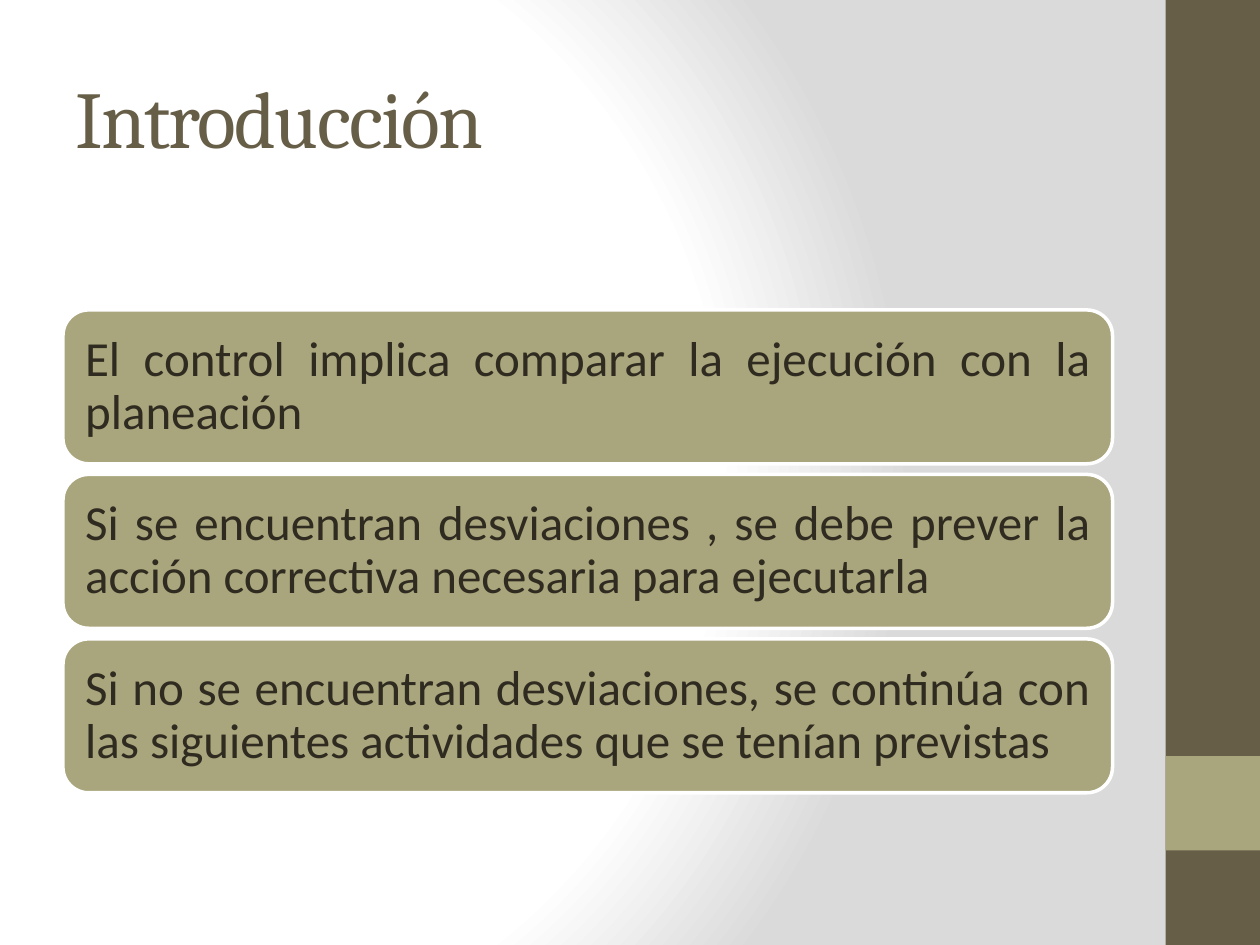
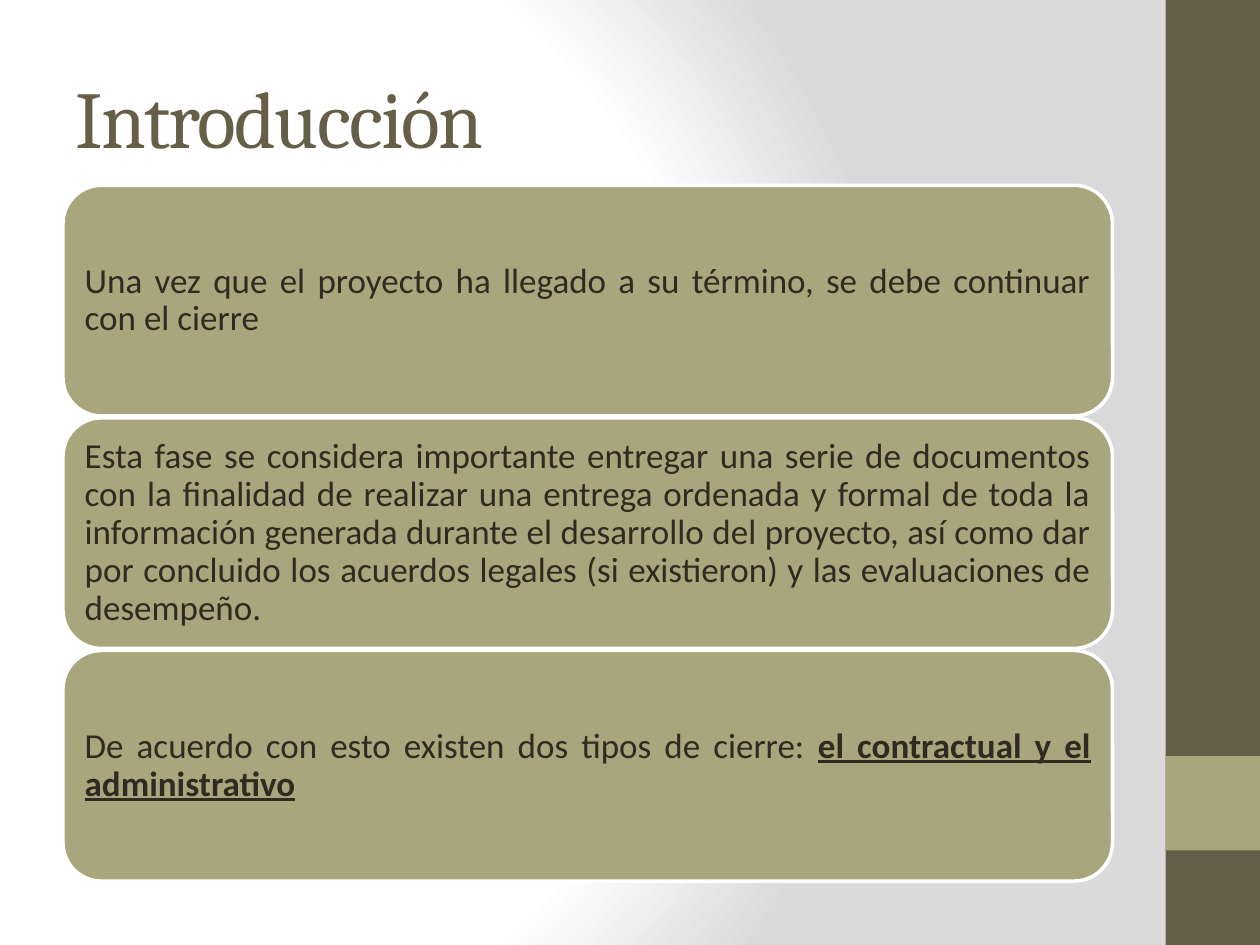
from dataclasses import dataclass
from typing import NamedTuple

from pptx import Presentation
from pptx.dml.color import RGBColor
from pptx.enum.shapes import MSO_SHAPE as Preset
from pptx.enum.text import MSO_ANCHOR as Anchor, PP_ALIGN as Align
from pptx.oxml import parse_xml
from pptx.oxml.ns import nsdecls
from pptx.util import Pt

BROWN = RGBColor(0x67, 0x5E, 0x47)
OLIVE = RGBColor(0xA9, 0xA5, 0x7C)
INK = RGBColor(0x2F, 0x2B, 0x20)
WHITE = RGBColor(0xFF, 0xFF, 0xFF)
GREY = RGBColor(0xDA, 0xDA, 0xDA)

TITLE_FONT = "Cambria"
BODY_FONT = "Calibri"
SLIDE_WIDTH, SLIDE_HEIGHT = 720, 540
CONTENT_LEFT, CONTENT_WIDTH = 36, 599.76
BAND_SIZE = 54
TITLE_ONLY_LAYOUT = 5


class Band(NamedTuple):
    top: float
    height: float
    color: RGBColor


class Span(NamedTuple):
    text: str
    emphasis: bool = False


@dataclass(frozen=True)
class CardStack:
    """Equal cards placed one below another; lengths and sizes in points."""
    top: float
    card_height: float
    gap: float
    inset: float
    font_size: float
    cards: list[list[Span]]


BANDS = [Band(0, SLIDE_HEIGHT, BROWN), Band(432, BAND_SIZE, OLIVE)]

STACKS = [
    CardStack(177.1, 87.9, 6.1, 8.4, 28, [
        [Span("El control implica comparar la ejecución con la planeación")],
        [Span("Si se encuentran desviaciones , se debe prever la acción "
              "correctiva necesaria para ejecutarla")],
        [Span("Si no se encuentran desviaciones, se continúa con las "
              "siguientes actividades que se tenían previstas")],
    ]),
    CardStack(105.9, 131.8, 1.1, 6, 20, [
        [Span("Una vez que el proyecto ha llegado a su término, se debe "
              "continuar con el cierre")],
        [Span("Esta fase se considera importante entregar una serie de "
              "documentos con la finalidad de realizar una entrega ordenada y "
              "formal de toda la información generada durante el desarrollo "
              "del proyecto, así como dar por concluido los acuerdos legales "
              "(si existieron) y las evaluaciones de desempeño.")],
        [Span("De acuerdo con esto existen dos tipos de cierre: "),
         Span("el contractual y el administrativo", emphasis=True)],
    ]),
]


def write_text(shape, spans: list[Span], *, font: str, size: float,
               color: RGBColor, align=Align.LEFT, line_spacing: float = 1.0,
               tracking: float = 0) -> None:
    """Fill the shape with one paragraph; tracking is in points."""
    frame = shape.text_frame
    frame.word_wrap = True
    frame.vertical_anchor = Anchor.MIDDLE
    paragraph = frame.paragraphs[0]
    paragraph.alignment = align
    paragraph.line_spacing = line_spacing
    for span in spans:
        run = paragraph.add_run()
        run.text = span.text
        run.font.name = font
        run.font.size = Pt(size)
        run.font.color.rgb = color
        if span.emphasis:
            run.font.bold = run.font.underline = True
        if tracking:
            run.font._element.set("spc", str(round(tracking * 100)))


def add_block(slide, preset, left: float, top: float, width: float,
              height: float, color: RGBColor):
    shape = slide.shapes.add_shape(
        preset, Pt(left), Pt(top), Pt(width), Pt(height))
    shape.shadow.inherit = False
    shape.fill.solid()
    shape.fill.fore_color.rgb = color
    shape.line.fill.background()
    return shape


def set_master_background(master) -> None:
    master.background.fill.solid()
    properties = master.element.cSld.bg.bgPr
    stops = "".join(
        f'<a:gs pos="{percent * 1000}"><a:srgbClr val="{color}"/></a:gs>'
        for percent, color in [(0, WHITE), (75, WHITE), (100, GREY)])
    gradient = parse_xml(
        f'<a:gradFill {nsdecls("a")} rotWithShape="1"><a:gsLst>{stops}</a:gsLst>'
        '<a:path path="circle"><a:fillToRect l="20000" t="50000" '
        'r="100000" b="50000"/></a:path></a:gradFill>')
    properties.replace(properties[0], gradient)


def move_bands_to_master(slide, master) -> None:
    """Draw the side bands on a slide, then move them behind the master."""
    tree = master.shapes.element
    for index, band in enumerate(BANDS):
        shape = add_block(slide, Preset.RECTANGLE, SLIDE_WIDTH - BAND_SIZE,
                          band.top, BAND_SIZE, band.height, band.color)
        shape.element.nvSpPr.cNvPr.set("id", str(20 + index))
        tree.insert(2 + index, shape.element)


def add_title(slide, text: str) -> None:
    title = slide.shapes.title
    title.left, title.top = Pt(CONTENT_LEFT), Pt(21.6)
    title.width, title.height = Pt(CONTENT_WIDTH), Pt(90)
    write_text(title, [Span(text)], font=TITLE_FONT, size=46, color=BROWN,
               tracking=-1)


def add_cards(slide, stack: CardStack) -> None:
    for index, spans in enumerate(stack.cards):
        top = stack.top + index * (stack.card_height + stack.gap)
        card = add_block(slide, Preset.ROUNDED_RECTANGLE, CONTENT_LEFT, top,
                         CONTENT_WIDTH, stack.card_height, OLIVE)
        card.line.color.rgb = WHITE
        card.line.width = Pt(2)
        frame = card.text_frame
        frame.margin_left = frame.margin_right = Pt(stack.inset)
        frame.margin_top = frame.margin_bottom = Pt(stack.inset)
        write_text(card, spans, font=BODY_FONT, size=stack.font_size,
                   color=INK, align=Align.JUSTIFY, line_spacing=0.9)


def main() -> None:
    presentation = Presentation()
    presentation.slide_width = Pt(SLIDE_WIDTH)
    presentation.slide_height = Pt(SLIDE_HEIGHT)
    master = presentation.slide_master
    set_master_background(master)
    layout = presentation.slide_layouts[TITLE_ONLY_LAYOUT]
    slides = [presentation.slides.add_slide(layout) for _ in STACKS]
    move_bands_to_master(slides[0], master)
    for slide, stack in zip(slides, STACKS):
        add_title(slide, "Introducción")
        add_cards(slide, stack)
    presentation.save("out.pptx")


if __name__ == "__main__":
    main()
